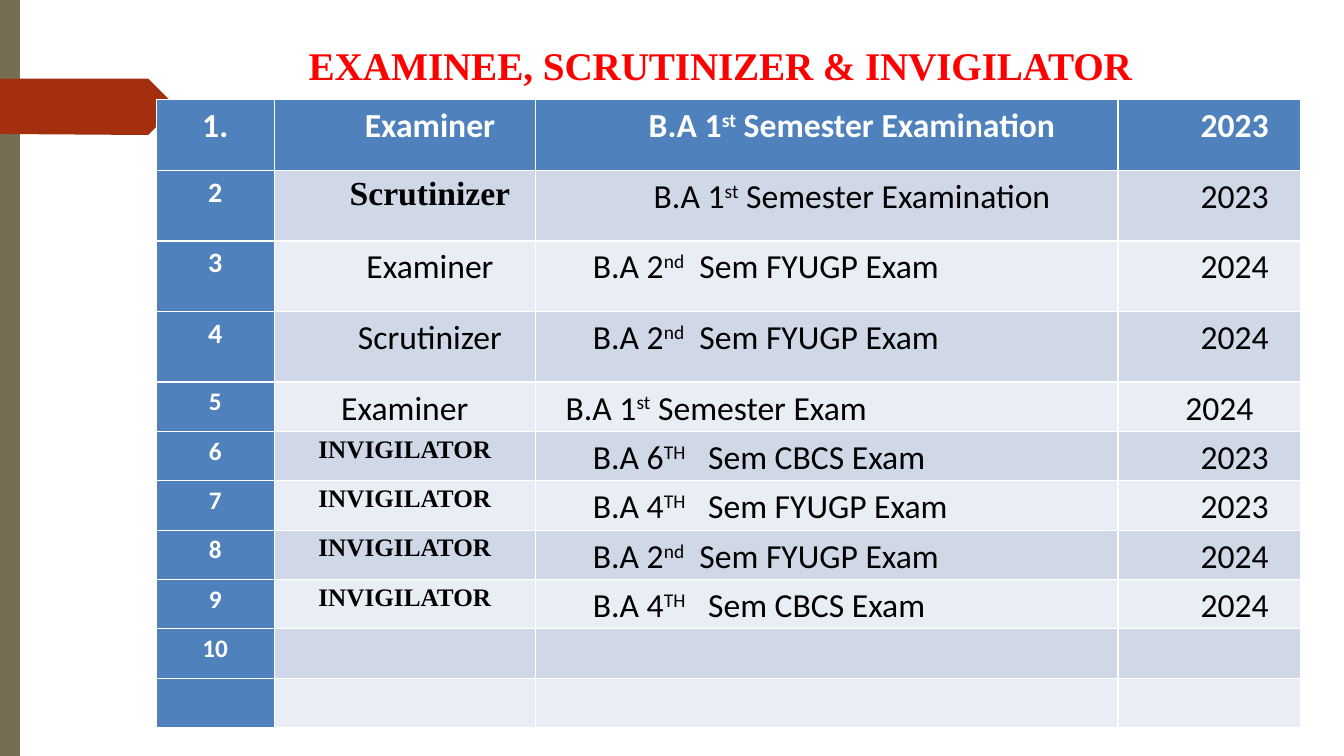
from pptx import Presentation
from pptx.dml.color import RGBColor
from pptx.enum.text import MSO_ANCHOR, PP_ALIGN
from pptx.util import Inches, Pt


def color(hex_value):
    return RGBColor.from_string(hex_value)


def add_run(paragraph, text, size, hex_value, bold=False, font="Calibri", **attributes):
    run = paragraph.add_run()
    run.text = text
    run.font.name = font
    run.font.size = Pt(size)
    run.font.bold = bold
    run.font.color.rgb = color(hex_value)
    for name, value in attributes.items():
        run._r.get_or_add_rPr().set(name, str(value))


SERIF = "Times New Roman"
WHITE, BLACK, BLUE = "FFFFFF", "000000", "4F81BD"
BANDS = ["E9EDF4", "D0D8E8"]

presentation = Presentation()
presentation.slide_width = Inches(13.33)
presentation.slide_height = Inches(7.5)
slide = presentation.slides.add_slide(presentation.slide_layouts[5])

side_band = [(0, 0), (0.2, 0), (0.2, 7.5), (0, 7.5)]
arrow_tag = [(0, 0.78), (1.47, 0.78), (1.73, 1.04), (1.74, 1.06),
             (1.73, 1.08), (1.48, 1.33), (1.47, 1.34), (0, 1.33)]
for outline, fill in [(side_band, "766E53"), (arrow_tag, "A42F0F")]:
    builder = slide.shapes.build_freeform(
        Inches(outline[0][0]), Inches(outline[0][1]), scale=1.0)
    builder.add_line_segments([(Inches(x), Inches(y)) for x, y in outline[1:]])
    decoration = builder.convert_to_shape()
    decoration.shadow.inherit = False
    decoration.fill.solid()
    decoration.fill.fore_color.rgb = color(fill)
    decoration.line.fill.background()

title = slide.shapes.title
title.left, title.top = Inches(1.86), Inches(0.36)
title.width, title.height = Inches(10.66), Inches(0.57)
title.text_frame.word_wrap = True
title.text_frame.vertical_anchor = MSO_ANCHOR.TOP
heading = title.text_frame.paragraphs[0]
heading.alignment = PP_ALIGN.CENTER
for text, spacing in [("EXAM", 0), ("INE", -20), ("E, ", 0),
                      ("SCRUTINIZER & INVIGILATOR ", -10)]:
    add_run(heading, text, 28, "FF0000", True, SERIF, spc=spacing)

duties = [
    ("1.", "Examiner", "B.A 1", "st", "Semester Examination", "2023"),
    ("2", "Scrutinizer", "B.A 1", "st", "Semester Examination", "2023"),
    ("3", "Examiner", "B.A 2", "nd", "Sem FYUGP Exam", "2024"),
    ("4", "Scrutinizer", "B.A 2", "nd", "Sem FYUGP Exam", "2024"),
    ("5", "Examiner", "B.A 1", "st", "Semester Exam", "2024"),
    ("6", "INVIGILATOR", "B.A 6", "TH", "Sem CBCS Exam", "2023"),
    ("7", "INVIGILATOR", "B.A 4", "TH", "Sem FYUGP Exam", "2023"),
    ("8", "INVIGILATOR", "B.A 2", "nd", "Sem FYUGP Exam", "2024"),
    ("9", "INVIGILATOR", "B.A 4", "TH", "Sem CBCS Exam", "2024"),
    ("10", "", "", "", "", ""),
    ("", "", "", "", "", ""),
]
ordinal_gaps = {"st": 0, "nd": 540, "TH": 1080}

duty_table = slide.shapes.add_table(
    len(duties), 4, Inches(1.55), Inches(0.99), Inches(11.35), Inches(6.23)).table
duty_table.first_col = True
for column, width in zip(duty_table.columns, [1.17, 2.59, 5.78, 1.81]):
    column.width = Inches(width)

for index, (number, role, course, ordinal, exam, year) in enumerate(duties):
    duty_table.rows[index].height = Inches(0.7 if index < 4 else 0.49)
    header = index == 0
    text_color = WHITE if header else BLACK
    number_size = 24 if header else 20 if index < 4 else 18
    invigilating = role == "INVIGILATOR"
    serif_role = invigilating or index == 1
    role_indent = 0.5 if index < 4 else 0
    exam_indent, year_indent = (0.23, 0.2) if index == 4 else (0.5, 0.5)

    paragraphs = []
    for position, indent in enumerate([0, role_indent, exam_indent, year_indent]):
        cell = duty_table.cell(index, position)
        cell.fill.solid()
        cell.fill.fore_color.rgb = color(
            BLUE if header or position == 0 else BANDS[index % 2])
        cell.margin_left = cell.margin_right = Inches(0.07)
        cell.margin_top = cell.margin_bottom = Inches(0)
        paragraph = cell.text_frame.paragraphs[0]
        paragraph.line_spacing = 1.15
        paragraph.alignment = (
            PP_ALIGN.LEFT if position == 2 and index > 1 else PP_ALIGN.CENTER)
        paragraph._p.get_or_add_pPr().set("marL", str(Inches(indent)))
        paragraphs.append(paragraph)

    number_line, role_line, exam_line, year_line = paragraphs
    if number:
        add_run(number_line, number, number_size, WHITE, True)
    if role:
        add_run(role_line, role, 18 if invigilating else 24, text_color,
                header or serif_role, SERIF if serif_role else "Calibri")
        add_run(exam_line, course, 24, text_color, header)
        add_run(exam_line, ordinal, 24, text_color, header, baseline=30000)
        add_run(exam_line, " ", 24, text_color, header, spc=ordinal_gaps[ordinal])
        add_run(exam_line, exam, 24, text_color, header)
        add_run(year_line, year, 24, text_color, header)

presentation.save("out.pptx")
